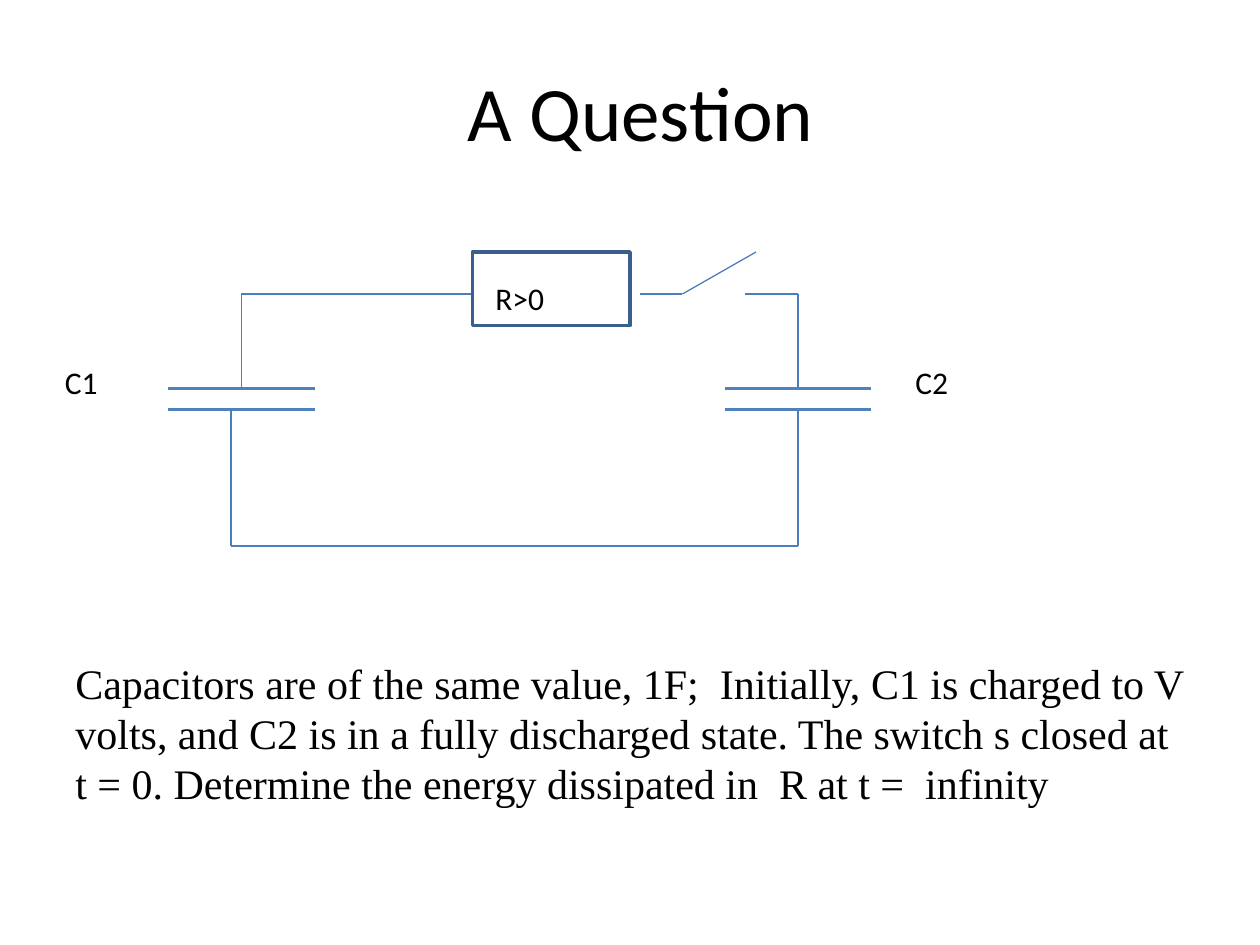
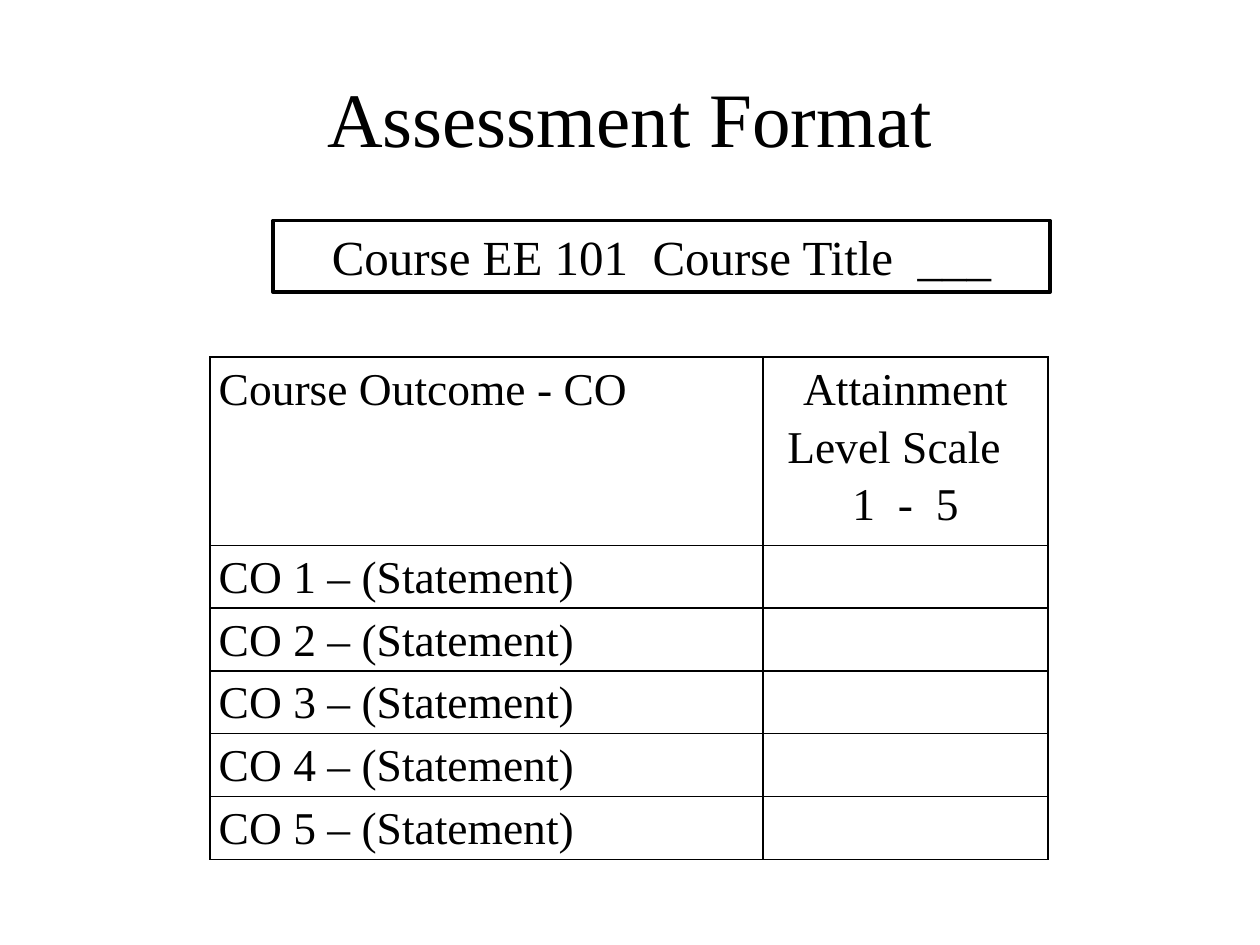
from dataclasses import dataclass
from itertools import pairwise

from lxml import etree
from pptx import Presentation
from pptx.dml.color import RGBColor
from pptx.enum import shapes, text
from pptx.oxml import ns
from pptx.util import Pt


@dataclass(frozen=True)
class Theme:
    ink: RGBColor = RGBColor(0x00, 0x00, 0x00)
    paper: RGBColor = RGBColor(0xFF, 0xFF, 0xFF)
    plate: RGBColor = RGBColor(0x4F, 0x81, 0xBD)
    wire: RGBColor = RGBColor(0x4B, 0x7E, 0xBC)
    resistor: RGBColor = RGBColor(0x3A, 0x5F, 0x8C)
    sans: str = "Calibri"
    serif: str = "Times New Roman"
    title: int = 44
    course: int = 28
    table: int = 26
    body: int = 24
    label: int = 18


theme = Theme()


def write(frame, lines, font, size, align=text.PP_ALIGN.LEFT, spacing=None):
    """Fill a text frame with one paragraph per line."""
    frame.word_wrap = True
    for index, line in enumerate(lines):
        paragraph = frame.paragraphs[0] if index == 0 else frame.add_paragraph()
        paragraph.alignment = align
        paragraph.line_spacing = spacing
        run = paragraph.add_run()
        run.text = line
        run.font.name = font
        run.font.size = Pt(size)
        run.font.color.rgb = theme.ink


def box(slide, left, top, width, height, outline):
    """Add a white rectangle with a coloured outline."""
    rectangle = slide.shapes.add_shape(
        shapes.MSO_SHAPE.RECTANGLE, Pt(left), Pt(top), Pt(width), Pt(height))
    rectangle.shadow.inherit = False
    rectangle.fill.solid()
    rectangle.fill.fore_color.rgb = theme.paper
    rectangle.line.color.rgb = outline
    rectangle.line.width = Pt(2)
    return rectangle


deck = Presentation()
deck.slide_width, deck.slide_height = Pt(720), Pt(540)
title_only = deck.slide_layouts[5]

slides = []
for heading, font, left, top in [
    ("A Question", theme.sans, 42, 18),
    ("Assessment Format", theme.serif, 36, 21.6),
]:
    slide = deck.slides.add_slide(title_only)
    title = slide.shapes.title
    title.left, title.top, title.width, title.height = Pt(left), Pt(top), Pt(648), Pt(90)
    title.text_frame.vertical_anchor = text.MSO_ANCHOR.MIDDLE
    write(title.text_frame, [heading], font, theme.title, text.PP_ALIGN.CENTER)
    slides.append(slide)
question, assessment = slides

# Circuit: capacitor plates, then wires as runs of corner points
top_wire, upper_plate, lower_plate, bottom_wire = 168, 222, 234, 312
plates = [[(left, y), (left + 84, y)]
          for left in (96, 414) for y in (upper_plate, lower_plate)]
wires = [
    [(138, upper_plate), (138, top_wire), (276, top_wire)],
    [(366, top_wire), (390, top_wire), (432, 144)],
    [(426, top_wire), (456, top_wire), (456, upper_plate)],
    [(132, lower_plate), (132, bottom_wire), (456, bottom_wire), (456, lower_plate)],
]
for routes, color, weight in [(plates, theme.plate, 2.25), (wires, theme.wire, 0.75)]:
    for route in routes:
        for start, end in pairwise(route):
            segment = question.shapes.add_connector(
                shapes.MSO_CONNECTOR.STRAIGHT, *map(Pt, start + end))
            segment.line.color.rgb = color
            segment.line.width = Pt(weight)
            etree.SubElement(segment._element.spPr, ns.qn("a:effectLst"))

box(question, 270, 144, 90, 42, theme.resistor)

problem = [
    "Capacitors are of the same value, 1F;  Initially, C1 is charged to V  volts, "
    "and C2 is in a fully discharged state. The switch s closed at",
    "t = 0. Determine the energy dissipated in  R at t =  infinity",
]
for lines, font, size, left, top, width, height in [
    (problem, theme.serif, theme.body, 36, 372, 654, 94),
    (["C1"], theme.sans, theme.label, 30, 204, 54, 29),
    (["C2"], theme.sans, theme.label, 516, 204, 102, 29),
    (["R>0"], theme.sans, theme.label, 276, 156, 114, 29),
]:
    caption = question.shapes.add_textbox(Pt(left), Pt(top), Pt(width), Pt(height))
    write(caption.text_frame, lines, font, size)

# Assessment form
course = box(assessment, 156, 126, 444, 41, theme.ink)
course.text_frame.vertical_anchor = text.MSO_ANCHOR.TOP
write(course.text_frame, ["Course EE 101  Course Title  ___"],
      theme.serif, theme.course, text.PP_ALIGN.CENTER)

rows = [(["Course Outcome - CO"], ["Attainment Level Scale  ", "1  -  5"])]
rows += [([f"CO {number} – (Statement)"], []) for number in range(1, 6)]
column_widths = (316, 163)
row_heights = [107.6] + [35.9] * 5
outcomes = assessment.shapes.add_table(
    len(rows), 2, Pt(120), Pt(204), Pt(sum(column_widths)), Pt(sum(row_heights))).table
outcomes.first_row = outcomes.horz_banding = False
for column, width in zip(outcomes.columns, column_widths):
    column.width = Pt(width)
for row, height, contents in zip(outcomes.rows, row_heights, rows):
    row.height = Pt(height)
    for cell, lines, align in zip(
            row.cells, contents, (text.PP_ALIGN.LEFT, text.PP_ALIGN.CENTER)):
        cell.margin_left = cell.margin_right = Pt(5)
        cell.margin_top = cell.margin_bottom = Pt(0)
        write(cell.text_frame, lines, theme.serif, theme.table, align, 1.15)
        properties = cell._tc.get_or_add_tcPr()
        for side in ("lnL", "lnR", "lnT", "lnB"):
            border = etree.SubElement(properties, ns.qn(f"a:{side}"), w=str(Pt(1)))
            fill = etree.SubElement(border, ns.qn("a:solidFill"))
            etree.SubElement(fill, ns.qn("a:srgbClr"), val=str(theme.ink))
        cell.fill.background()

deck.save("out.pptx")
